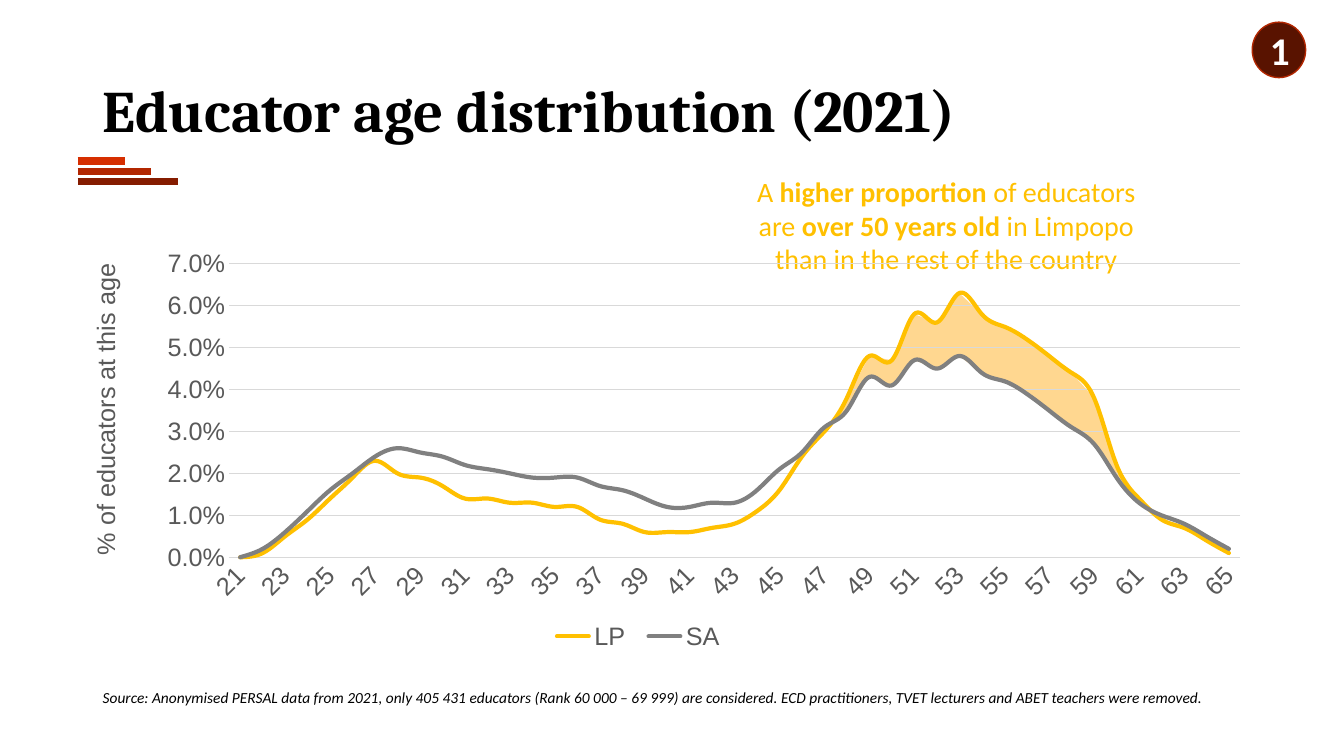
from lxml import etree
from pptx import Presentation
from pptx.chart.data import CategoryChartData
from pptx.dml.color import RGBColor
from pptx.enum.chart import XL_CHART_TYPE, XL_LEGEND_POSITION, XL_TICK_MARK, XL_MARKER_STYLE
from pptx.enum.shapes import MSO_CONNECTOR, MSO_SHAPE
from pptx.enum.text import MSO_ANCHOR, PP_ALIGN
from pptx.oxml import parse_xml
from pptx.oxml.ns import qn
from pptx.util import Inches, Pt

LINE = XL_CHART_TYPE.LINE
BOTTOM = XL_LEGEND_POSITION.BOTTOM
NO_MARKER = XL_MARKER_STYLE.NONE
NO_TICK = XL_TICK_MARK.NONE
STRAIGHT = MSO_CONNECTOR.STRAIGHT
ROUNDED, OVAL = MSO_SHAPE.ROUNDED_RECTANGLE, MSO_SHAPE.OVAL
MIDDLE = MSO_ANCHOR.MIDDLE
LEFT, CENTER = PP_ALIGN.LEFT, PP_ALIGN.CENTER

COLORS = {name: RGBColor.from_string(code) for name, code in {
    "black": "000000", "white": "FFFFFF", "gold": "FFC000", "grey": "808080",
    "label": "595959", "grid": "D9D9D9", "band": "FFBD47", "maroon": "591300",
    "dark red": "851C00", "red": "B22600", "bright red": "D62E00",
}.items()}

NAMESPACES = (
    'xmlns:c="http://schemas.openxmlformats.org/drawingml/2006/chart" '
    'xmlns:a="http://schemas.openxmlformats.org/drawingml/2006/main"'
)
CLEAR = f"<c:spPr {NAMESPACES}><a:noFill/><a:ln><a:noFill/></a:ln></c:spPr>"

FIRST_AGE, LAST_AGE = 21, 65
AGES = range(FIRST_AGE, LAST_AGE + 1)
TOP_SHARE = 0.07
PER_MILLE = {
    "LP": [0, 1, 5, 9, 14, 19, 23, 20, 19, 17, 14, 14, 13, 13, 12, 12, 9, 8, 6, 6, 6, 7, 8,
           11, 16, 24, 30, 38, 48, 47, 58, 56, 63, 58, 55, 52, 48, 44, 38, 22, 14, 9, 7, 4, 1],
    "SA": [0, 2, 6, 11, 16, 20, 24, 26, 25, 24, 22, 21, 20, 19, 19, 19, 17, 16, 14, 12, 12, 13,
           13, 16, 21, 25, 31, 35, 43, 41, 47, 45, 48, 44, 42, 39, 35, 31, 27, 19, 13, 10, 8, 5, 2],
}
SHARES = {region: [value / 1000 for value in values] for region, values in PER_MILLE.items()}

CHART_LEFT, CHART_TOP, CHART_WIDTH, CHART_HEIGHT = 0.48, 2.08, 11.94, 4.48
PLOT = {"x": 0.15, "y": 0.12, "w": 0.84, "h": 0.65}


def write(frame, runs, size, color, font="Calibri", italic=False, align=LEFT, spacing=1.0):
    frame.word_wrap = True
    frame.vertical_anchor = MIDDLE
    paragraph = frame.paragraphs[0]
    paragraph.alignment = align
    paragraph.line_spacing = spacing
    for text, bold in runs:
        run = paragraph.add_run()
        run.text = text
        run.font.size = Pt(size)
        run.font.name = font
        run.font.bold = bold
        run.font.italic = italic
        run.font.color.rgb = COLORS[color]


def place(part, before, **places):
    for automatic in part.findall(qn("c:layout")):
        part.remove(automatic)
    values = "".join(f'<c:{key} val="{value}"/>' for key, value in places.items())
    layout = f"<c:layout {NAMESPACES}><c:manualLayout>{values}</c:manualLayout></c:layout>"
    position = 0 if before is None else part.index(part.find(qn(before))) + 1
    part.insert(position, parse_xml(layout))


prs = Presentation()
prs.slide_width, prs.slide_height = Inches(13.33), Inches(7.5)
slide = prs.slides.add_slide(prs.slide_layouts[6])
shapes = slide.shapes

accents = [("dark red", 1.0), ("red", 0.73), ("bright red", 0.47)]
for step, (color, length) in enumerate(accents):
    y = Inches(1.8 - 0.1 * step)
    accent = shapes.add_connector(STRAIGHT, Inches(0.77), y, Inches(0.77 + length), y)
    accent.line.color.rgb = COLORS[color]
    accent.line.width = Pt(5.5)
    etree.SubElement(accent._element.spPr, qn("a:effectLst"))

plot_left = CHART_LEFT + PLOT["x"] * CHART_WIDTH
plot_top = CHART_TOP + PLOT["y"] * CHART_HEIGHT
age_step = PLOT["w"] * CHART_WIDTH / len(AGES)
share_scale = PLOT["h"] * CHART_HEIGHT / TOP_SHARE
curves = {
    region: [
        (Inches(plot_left + (index + 0.5) * age_step),
         Inches(plot_top + (TOP_SHARE - share) * share_scale))
        for index, share in enumerate(values)
    ]
    for region, values in SHARES.items()
}

older = slice(47 - FIRST_AGE, 61 - FIRST_AGE + 1)
outline = curves["LP"][older] + curves["SA"][older][::-1]
builder = shapes.build_freeform(*outline[0])
builder.add_line_segments(outline[1:], close=True)
age_gap = builder.convert_to_shape()
age_gap.shadow.inherit = False
age_gap.line.fill.background()
age_gap.fill.solid()
age_gap.fill.fore_color.rgb = COLORS["band"]
band_color = age_gap._element.spPr.find(f"{qn('a:solidFill')}/{qn('a:srgbClr')}")
etree.SubElement(band_color, qn("a:alpha"), val="60000")

heading = shapes.add_textbox(Inches(0.92), Inches(0.4), Inches(11.5), Inches(1.45))
write(heading.text_frame, [("Educator age distribution (2021)", True)], 42, "black",
      font="Cambria", spacing=0.9)

callout = shapes.add_shape(ROUNDED, Inches(7.34), Inches(1.79), Inches(4.09), Inches(0.88))
callout.adjustments[0] = 0.24
callout.shadow.inherit = False
callout.fill.solid()
callout.fill.fore_color.rgb = COLORS["white"]
callout.line.fill.background()
write(callout.text_frame, [
    ("A ", False), ("higher proportion ", True), ("of educators are ", False),
    ("over 50 years old ", True), ("in Limpopo than in the rest of the country", False),
], 20, "gold", align=CENTER)

age_data = CategoryChartData(number_format="0.0%")
age_data.categories = [str(age) for age in AGES]
for region, values in SHARES.items():
    age_data.add_series(region, values)
chart = shapes.add_chart(
    LINE, Inches(CHART_LEFT), Inches(CHART_TOP), Inches(CHART_WIDTH), Inches(CHART_HEIGHT),
    age_data,
).chart
chart.has_title = False
chart.font.size = Pt(18)
chart.font.name = "Arial"
chart.font.color.rgb = COLORS["label"]
chart.plots[0].vary_by_categories = False

chart.has_legend = True
chart.legend.position = BOTTOM
chart.legend.include_in_layout = False
place(chart.legend._element, "c:legendPos", xMode="edge", yMode="edge",
      x=0.41, y=0.9, w=0.16, h=0.09)

for series, color in zip(chart.plots[0].series, ["gold", "grey"]):
    series.smooth = True
    series.marker.style = NO_MARKER
    series.format.line.color.rgb = COLORS[color]
    series.format.line.width = Pt(3)
    series._element.find(f"{qn('c:spPr')}/{qn('a:ln')}").set("cap", "rnd")

age_axis, share_axis = chart.category_axis, chart.value_axis
for axis in (age_axis, share_axis):
    axis.major_tick_mark = axis.minor_tick_mark = NO_TICK
    axis.tick_labels.font.size = Pt(18)
for rule in (age_axis.format.line, share_axis.major_gridlines.format.line):
    rule.color.rgb = COLORS["grid"]
    rule.width = Pt(0.75)

age_axis._element.find(f"{qn('c:txPr')}/{qn('a:bodyPr')}").set("rot", "-2700000")
label_skip = etree.Element(qn("c:tickLblSkip"), val="2")
age_axis._element.find(qn("c:noMultiLvlLbl")).addprevious(label_skip)

share_axis.minimum_scale, share_axis.maximum_scale = 0, TOP_SHARE
share_axis.major_unit = 0.01
share_axis.tick_labels.number_format = "0.0%"
share_axis.tick_labels.number_format_is_linked = False
share_axis.format.line.fill.background()
share_title = share_axis.axis_title
write(share_title.text_frame, [("% of educators at this age", False)], 18, "label", font="Arial")
turned = share_title._element.find(f".//{qn('a:bodyPr')}")
turned.set("rot", "-5400000")
turned.set("vert", "horz")
place(share_title._element, "c:tx", xMode="edge", yMode="edge", x=0.03, y=0.11)

chart_body = chart._chartSpace.find(qn("c:chart"))
plot_area = chart_body.find(qn("c:plotArea"))
place(plot_area, None, layoutTarget="inner", xMode="edge", yMode="edge", **PLOT)
plot_area.append(parse_xml(CLEAR))
chart_body.addnext(parse_xml(CLEAR))

badge = shapes.add_shape(OVAL, Inches(12.42), Inches(0.22), Inches(0.53), Inches(0.55))
badge.shadow.inherit = False
badge.fill.solid()
badge.fill.fore_color.rgb = COLORS["maroon"]
badge.line.color.rgb = COLORS["red"]
badge.line.width = Pt(1)
write(badge.text_frame, [("1", True)], 28, "white", align=CENTER)

source_note = shapes.add_textbox(Inches(0.92), Inches(6.73), Inches(11.5), Inches(0.37))
write(source_note.text_frame, [(
    "Source: Anonymised PERSAL data from 2021, only 405 431 educators (Rank 60 000 – 69 999) "
    "are considered. ECD practitioners, TVET lecturers and ABET teachers were removed.", False,
)], 11, "black", italic=True)

prs.save("out.pptx")
